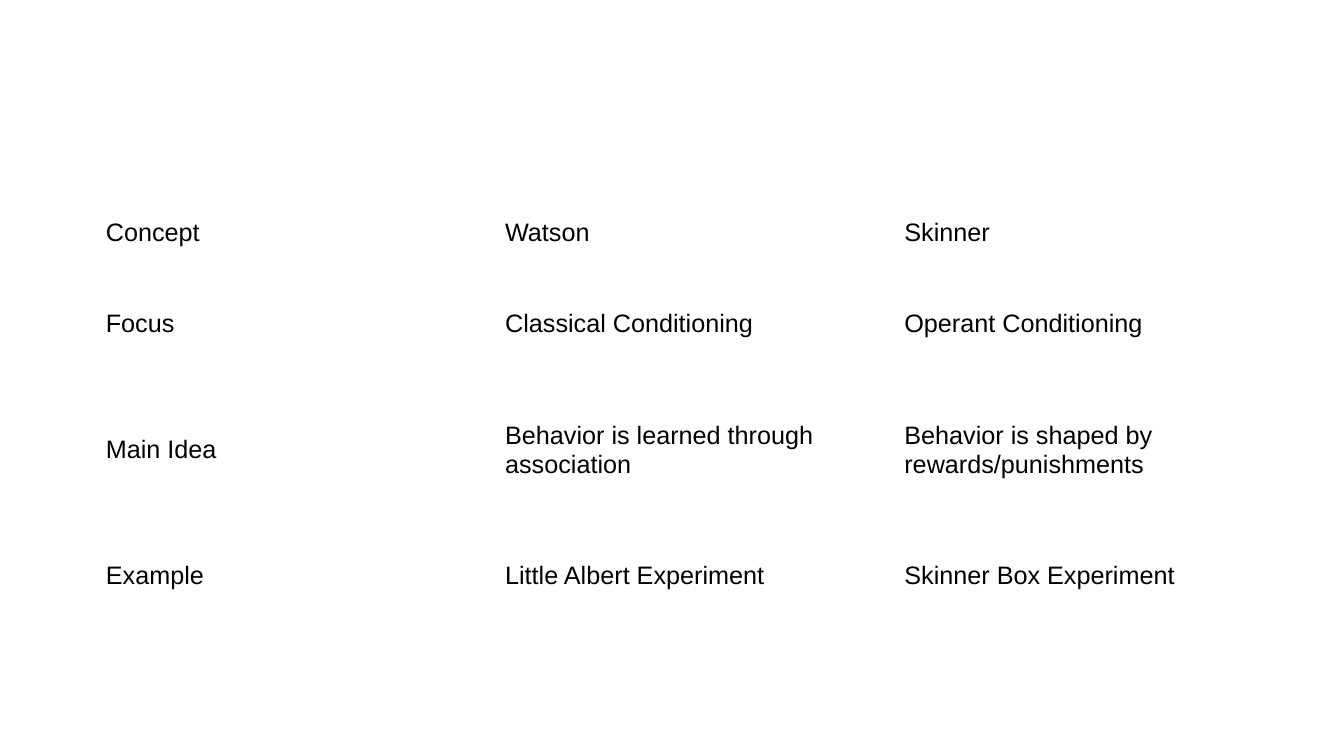
from dataclasses import dataclass

from pptx import Presentation
from pptx.dml.color import RGBColor
from pptx.enum.text import MSO_ANCHOR
from pptx.util import Inches, Pt

MIDDLE = MSO_ANCHOR.MIDDLE
BLANK_LAYOUT = 6

SLIDE_WIDTH = Inches(13.33)
SLIDE_HEIGHT = Inches(7.5)
TABLE_LEFT = Inches(0.95)
TABLE_TOP = Inches(1.85)
COLUMN = Inches(3.96)
ROW = Inches(0.91)

COMPARISON = [
    ("Concept", "Watson", "Skinner"),
    ("Focus", "Classical Conditioning", "Operant Conditioning"),
    ("Main Idea", "Behavior is learned through association",
     "Behavior is shaped by rewards/punishments"),
    ("Example", "Little Albert Experiment", "Skinner Box Experiment"),
]
ROW_SPANS = [1, 1, 1.75, 1]


@dataclass(frozen=True)
class Theme:
    font: str = "Arial"
    body_size: Pt = Pt(18)
    text: RGBColor = RGBColor(0x00, 0x00, 0x00)
    background: RGBColor = RGBColor(0xFF, 0xFF, 0xFF)


class SlideBuilder:
    def __init__(self, slide, theme):
        self.slide = slide
        self.theme = theme

    def background(self):
        fill = self.slide.background.fill
        fill.solid()
        fill.fore_color.rgb = self.theme.background

    def table(self, rows, row_spans):
        """Add a plain table; row_spans gives each height in grid rows."""
        column_count = len(rows[0])
        table = self.slide.shapes.add_table(
            len(rows), column_count, TABLE_LEFT, TABLE_TOP,
            column_count * COLUMN, int(sum(row_spans) * ROW)).table
        table.first_row = False
        table.horz_banding = False
        for column in table.columns:
            column.width = COLUMN
        for row, span, texts in zip(table.rows, row_spans, rows):
            row.height = int(span * ROW)
            for cell, text in zip(row.cells, texts):
                self.cell(cell, text)

    def cell(self, cell, text):
        cell.fill.background()
        cell.vertical_anchor = MIDDLE
        cell.text = text
        font = cell.text_frame.paragraphs[0].font
        font.name = self.theme.font
        font.size = self.theme.body_size
        font.color.rgb = self.theme.text


def main():
    presentation = Presentation()
    presentation.slide_width = SLIDE_WIDTH
    presentation.slide_height = SLIDE_HEIGHT
    slide = presentation.slides.add_slide(
        presentation.slide_layouts[BLANK_LAYOUT])
    builder = SlideBuilder(slide, Theme())
    builder.background()
    builder.table(COMPARISON, ROW_SPANS)
    presentation.save("out.pptx")


if __name__ == "__main__":
    main()
